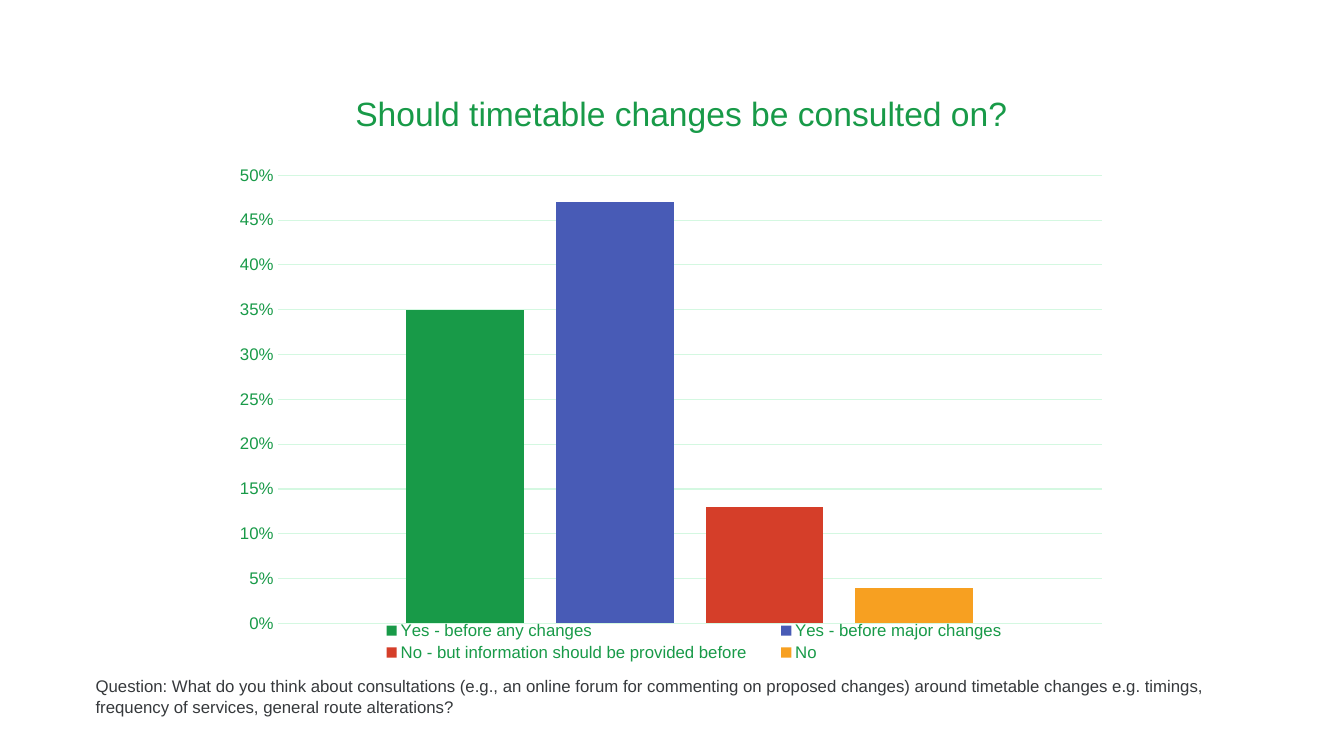
from dataclasses import dataclass

from lxml import etree
from pptx import Presentation
from pptx.chart.data import CategoryChartData
from pptx.dml.color import RGBColor as RGB
from pptx.enum.chart import XL_CHART_TYPE as Kind, XL_LEGEND_POSITION as Side
from pptx.enum.chart import XL_TICK_MARK as Tick
from pptx.oxml.ns import qn
from pptx.util import Cm, Pt


@dataclass
class Theme:
    face: str = "Arial"
    green: RGB = RGB(0x18, 0x9A, 0x48)
    blue: RGB = RGB(0x48, 0x5B, 0xB6)
    red: RGB = RGB(0xD5, 0x3E, 0x29)
    amber: RGB = RGB(0xF7, 0xA0, 0x21)
    grid: RGB = RGB(0xD4, 0xF8, 0xE1)
    ink: RGB = RGB(0x36, 0x39, 0x3C)
    head: Pt = Pt(24)
    body: Pt = Pt(12)


theme = Theme()


def style(font, size, color):
    font.name, font.size, font.bold = theme.face, size, False
    font.color.rgb = color


def place(part, index, **box):
    """Fix a chart part at fractions of the chart's width and height."""
    for old in part.findall(qn("c:layout")):
        part.remove(old)
    layout = etree.Element(qn("c:layout"))
    part.insert(index, layout)
    manual = etree.SubElement(layout, qn("c:manualLayout"))
    if part.tag == qn("c:plotArea"):
        etree.SubElement(manual, qn("c:layoutTarget")).set("val", "inner")
    for mode in ("xMode", "yMode"):
        etree.SubElement(manual, qn(f"c:{mode}")).set("val", "edge")
    for key, share in box.items():
        etree.SubElement(manual, qn(f"c:{key}")).set("val", str(share))


answers = [
    ("Yes - before any changes", 0.35, theme.green),
    ("Yes - before major changes", 0.47, theme.blue),
    ("No - but information should be provided before", 0.13, theme.red),
    ("No", 0.04, theme.amber),
]

deck = Presentation()
deck.slide_width, deck.slide_height = Cm(33.87), Cm(19.05)
slide = deck.slides.add_slide(deck.slide_layouts[6])

# Chart
data = CategoryChartData(number_format="0%")
data.categories = ["1"]
for name, share, color in answers:
    data.add_series(name, [share])
chart = slide.shapes.add_chart(
    Kind.COLUMN_CLUSTERED, Cm(5.64), Cm(2.01), Cm(22.58), Cm(15.06), data
).chart
style(chart.font, theme.body, theme.green)

plot = chart.plots[0]
plot.vary_by_categories = False
plot.gap_width, plot.overlap = 219, -27
for series, (name, share, color) in zip(plot.series, answers):
    series.format.fill.solid()
    series.format.fill.fore_color.rgb = color
place(chart.element.find(".//" + qn("c:plotArea")), 0, x=0.06, y=0.16, w=0.92, h=0.75)

# Title
title = chart.chart_title
title.text_frame.text = "Should timetable changes be consulted on?"
style(title.text_frame.paragraphs[0].runs[0].font, theme.head, theme.green)
title.include_in_layout = False
place(chart.element.find(".//" + qn("c:title")), 1, x=0.14, y=0.01)

# Axes
chart.category_axis.visible = False
axis = chart.value_axis
axis.minimum_scale, axis.maximum_scale, axis.major_unit = 0, 0.5, 0.05
axis.major_tick_mark = axis.minor_tick_mark = Tick.NONE
axis.format.line.fill.background()
axis.major_gridlines.format.line.color.rgb = theme.grid
axis.major_gridlines.format.line.width = Pt(0.75)
axis.tick_labels.number_format = "0%"
axis.tick_labels.number_format_is_linked = False
style(axis.tick_labels.font, theme.body, theme.green)

# Legend
chart.has_legend = True
legend = chart.legend
legend.position = Side.BOTTOM
legend.include_in_layout = False
style(legend.font, theme.body, theme.green)
place(chart.element.find(".//" + qn("c:legend")), 1, x=0.15, y=0.9, w=0.75, h=0.08)

# Question
note = slide.shapes.add_textbox(Cm(2.41), Cm(17.04), Cm(29.79), Cm(1.24))
frame = note.text_frame
frame.word_wrap = True
frame.margin_left = frame.margin_right = frame.margin_top = frame.margin_bottom = 0
frame.text = (
    "Question: What do you think about consultations (e.g., an online forum for "
    "commenting on proposed changes) around timetable changes e.g. timings, "
    "frequency of services, general route alterations?"
)
style(frame.paragraphs[0].runs[0].font, theme.body, theme.ink)

deck.save("out.pptx")
